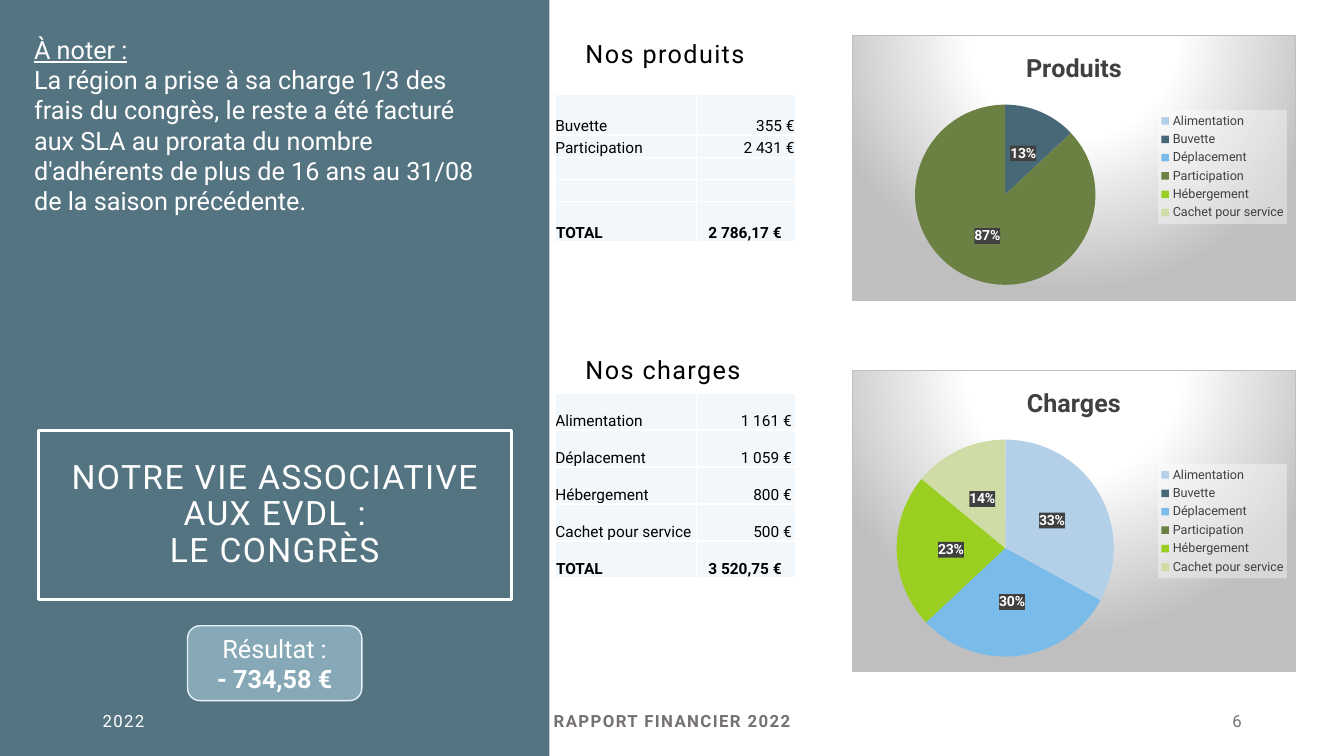
"""Build the slide on the congress budget."""
import lxml.etree
import pptx
import pptx.chart.data
import pptx.dml.color
import pptx.enum.chart
import pptx.enum.shapes
import pptx.enum.text
import pptx.oxml
import pptx.oxml.ns
import pptx.util

Pt = pptx.util.Pt
qn = pptx.oxml.ns.qn
Align = pptx.enum.text.PP_ALIGN
Anchor = pptx.enum.text.MSO_ANCHOR
Preset = pptx.enum.shapes.MSO_SHAPE

FONT = "Roboto"
COLOURS = {
    "panel": "476977", "white": "FFFFFF", "black": "000000", "grey": "767171",
    "cell": "F2F7FB", "result": "87A9B7", "result_line": "E4F1FB",
    "dark": "404040", "silver": "BFBFBF",
}
CATEGORIES = {
    "Alimentation": "B4D0E9", "Buvette": "476977", "Déplacement": "79BBE9",
    "Participation": "6B8043", "Hébergement": "9ACF21", "Cachet pour service": "CFDCA5",
}
NAMESPACES = " ".join(f'xmlns:{prefix}="{pptx.oxml.ns.nsdecls(prefix).split(chr(34))[1]}"'
                      for prefix in ("a", "c"))


def rgb(name):
    """Return the named colour."""
    return pptx.dml.color.RGBColor.from_string(COLOURS[name])


def element(tag, content, attributes=""):
    """Make an XML element of the drawing or chart vocabulary."""
    return pptx.oxml.parse_xml(f"<{tag} {NAMESPACES} {attributes}>{content}</{tag}>")


def solid(name, alpha=100):
    """Return the XML of a solid fill, opacity in percent."""
    return (f'<a:solidFill><a:srgbClr val="{COLOURS[name]}">'
            f'<a:alpha val="{alpha * 1000}"/></a:srgbClr></a:solidFill>')


def set_font(font, size, colour, bold=False):
    """Set the face, size, colour and weight of a font."""
    font.name, font.size, font.bold = FONT, Pt(size), bold
    font.color.rgb = rgb(colour)


def write(frame, lines, size, colour, align=Align.LEFT, bold=False, spacing=0,
          leading=None, anchor=Anchor.MIDDLE):
    """Fill a text frame with one paragraph for each line."""
    frame.word_wrap = True
    frame.vertical_anchor = anchor
    frame.text = "\n".join(lines)
    for para in frame.paragraphs:
        para.alignment = align
        para.line_spacing = leading
        for span in para.runs:
            set_font(span.font, size, colour, bold)
            if spacing:
                span.font._element.set("spc", str(spacing * 100))


def add_label(page, bounds, lines, size, colour, **options):
    """Add a text box."""
    box = page.shapes.add_textbox(*map(Pt, bounds))
    write(box.text_frame, lines, size, colour, **options)
    return box


def add_box(page, preset, bounds, fill=None, line=None, width=1):
    """Add a flat preset shape."""
    box = page.shapes.add_shape(preset, *map(Pt, bounds))
    box.shadow.inherit = False
    if fill:
        box.fill.solid()
        box.fill.fore_color.rgb = rgb(fill)
    else:
        box.fill.background()
    if line:
        box.line.color.rgb = rgb(line)
        box.line.width = Pt(width)
    else:
        box.line.fill.background()
    return box


def format_cell(cell, text, align, bold, left, right):
    """Write a table cell with a pale fill and white borders."""
    cell.margin_left, cell.margin_right = Pt(left), Pt(right)
    cell.margin_top = cell.margin_bottom = 0
    cell.vertical_anchor = Anchor.BOTTOM
    cell.fill.solid()
    cell.fill.fore_color.rgb = rgb("cell")
    for index, side in enumerate("LRTB"):
        border = element(f"a:ln{side}", solid("white"), 'w="12700"')
        cell._tc.tcPr.insert(index, border)
    para = cell.text_frame.paragraphs[0]
    para.text = text
    para.alignment = align
    for span in para.runs:
        set_font(span.font, 11, "black", bold)
    if not text:
        para._p.get_or_add_endParaRPr().set("sz", "1100")


def add_budget(page, top, heights, rows, right):
    """Add a two-column table whose last row is the total."""
    widths = (100.8, 70.6)
    frame = page.shapes.add_table(len(rows), 2, Pt(396.7), Pt(top),
                                  Pt(sum(widths)), Pt(sum(heights)))
    table = frame.table
    table.first_row = table.horz_banding = False
    for column, width in zip(table.columns, widths):
        column.width = Pt(width)
    for index, (name, amount) in enumerate(rows):
        table.rows[index].height = Pt(heights[index])
        total = name == "TOTAL"
        format_cell(table.cell(index, 0), name, Align.LEFT, total, 0.5 if total else 0, 0)
        format_cell(table.cell(index, 1), amount, Align.LEFT if total else Align.RIGHT,
                    total, 8.5 if total else 0, right)


def place(part, after, bounds, inner=False):
    """Give a chart part a fixed place in fractions of the chart."""
    for old in part.findall(qn("c:layout")):
        part.remove(old)
    target = '<c:layoutTarget val="inner"/>' if inner else ""
    modes = '<c:xMode val="edge"/><c:yMode val="edge"/>'
    sizes = "".join(f'<c:{key} val="{value}"/>' for key, value in zip("xywh", bounds))
    layout = element("c:layout", f"<c:manualLayout>{target}{modes}{sizes}</c:manualLayout>")
    if after is None:
        part.insert(0, layout)
    else:
        after.addnext(layout)


def add_background(part, content):
    """Put shape properties before the text properties of a chart part."""
    part.find(qn("c:txPr")).addprevious(element("c:spPr", content))


def add_pie(page, title, bounds, values, pie_bounds, legend_bounds):
    """Add a pie chart with percentages and a legend."""
    data = pptx.chart.data.CategoryChartData()
    data.categories = list(CATEGORIES)
    data.add_series(title, values)
    chart = page.shapes.add_chart(pptx.enum.chart.XL_CHART_TYPE.PIE,
                                  *map(Pt, bounds), data).chart
    set_font(chart.font, 10, "black")
    chart.has_title = True
    write(chart.chart_title.text_frame, [title], 18, "dark", Align.CENTER, True)
    stops = "".join(f'<a:gs pos="{stop * 1000}"><a:srgbClr val="{COLOURS[name]}"/></a:gs>'
                    for stop, name in ((0, "white"), (39, "white"), (100, "silver")))
    add_background(chart._chartSpace, (
        f'<a:gradFill><a:gsLst>{stops}</a:gsLst><a:path path="circle">'
        '<a:fillToRect l="50000" t="-80000" r="50000" b="180000"/></a:path></a:gradFill>'
        f'<a:ln w="9525">{solid("silver")}</a:ln>'))
    place(chart._chartSpace.chart.plotArea, None, pie_bounds, inner=True)

    chart.has_legend = True
    legend = chart.legend
    legend.position = pptx.enum.chart.XL_LEGEND_POSITION.RIGHT
    legend.include_in_layout = False
    set_font(legend.font, 9, "dark")
    place(legend._element, legend._element.find(qn("c:legendPos")), legend_bounds)
    add_background(legend._element, solid("white", 39))

    plot = chart.plots[0]
    plot.vary_by_categories = True
    for index, colour in enumerate(CATEGORIES.values()):
        fill = plot.series[0].points[index].format.fill
        fill.solid()
        fill.fore_color.rgb = pptx.dml.color.RGBColor.from_string(colour)
    plot.has_data_labels = True
    labels = plot.data_labels
    labels.show_percentage, labels.show_value = True, False
    labels.number_format, labels.number_format_is_linked = "0%", False
    labels.position = pptx.enum.chart.XL_LABEL_POSITION.CENTER
    set_font(labels.font, 10, "white", True)
    add_background(labels._element, solid("dark", 90))


def main():
    """Build and save the deck."""
    deck = pptx.Presentation()
    deck.slide_width, deck.slide_height = Pt(960), Pt(540)
    page = deck.slides.add_slide(deck.slide_layouts[6])

    panel = add_box(page, Preset.RECTANGLE, (0, 0, 392.4, 540), "panel")
    tint = panel._element.spPr.find(qn("a:solidFill"))[0]
    lxml.etree.SubElement(tint, qn("a:alpha")).set("val", "92000")
    title = add_box(page, Preset.RECTANGLE, (27.4, 307.4, 337.7, 121), line="white", width=2.25)
    write(title.text_frame, ["NOTRE VIE ASSOCIATIVE", "AUX EVDL :", "LE CONGRÈS"], 24, "white",
          Align.CENTER, spacing=1, leading=0.9)
    result = add_box(page, Preset.ROUNDED_RECTANGLE, (134, 447, 124.5, 53.5),
                     "result", "result_line")
    write(result.text_frame, ["Résultat :", "- 734,58 €"], 18, "white", Align.CENTER)
    result.text_frame.paragraphs[1].runs[0].font.bold = True
    note = add_label(page, (17.3, 20.9, 341.3, 159.8), [
        "À noter :",
        "La région a prise à sa charge 1/3 des frais du congrès, le reste a été facturé aux SLA "
        "au prorata du nombre d'adhérents de plus de 16 ans au 31/08 de la saison précédente.",
    ], 18, "white", anchor=Anchor.TOP)
    note.text_frame.paragraphs[0].runs[0].font.underline = True

    for heading, top in (("Nos produits", 10.8), ("Nos charges", 236.2)):
        add_label(page, (411.1, top, 461.5, 33.8), [heading], 18, "black", spacing=1, leading=2)
    add_budget(page, 67.7, (28.8, 15.8, 15.8, 15.8, 28.8), (
        ("Buvette", "355 €"), ("Participation", "2 431 €"), ("", ""), ("", ""),
        ("TOTAL", "2 786,17 €")), 0.5)
    add_budget(page, 280.8, [26.4] * 5, (
        ("Alimentation", "1 161 €"), ("Déplacement", "1 059 €"), ("Hébergement", "800 €"),
        ("Cachet pour service", "500 €"), ("TOTAL", "3 520,75 €")), 2.5)
    add_pie(page, "Produits", (608.4, 25.2, 317.5, 190), (None, 13, None, 87, None, None),
            (0.14, 0.26, 0.41, 0.68), (0.69, 0.28, 0.29, 0.43))
    add_pie(page, "Charges", (608.4, 264.2, 317.5, 216), (33, None, 30, None, 23, 14),
            (0.1, 0.23, 0.49, 0.72), (0.69, 0.31, 0.29, 0.38))

    for text, left, width, colour, align, bold in (
            ("2022", 66.2, 216, "white", Align.LEFT, False),
            ("RAPPORT FINANCIER 2022", 318.2, 324, "grey", Align.CENTER, True),
            ("6", 678.2, 216, "grey", Align.RIGHT, False)):
        add_label(page, (left, 500.4, width, 28.8), [text], 12, colour,
                  align=align, bold=bold, spacing=1)
    deck.save("out.pptx")


if __name__ == "__main__":
    main()
